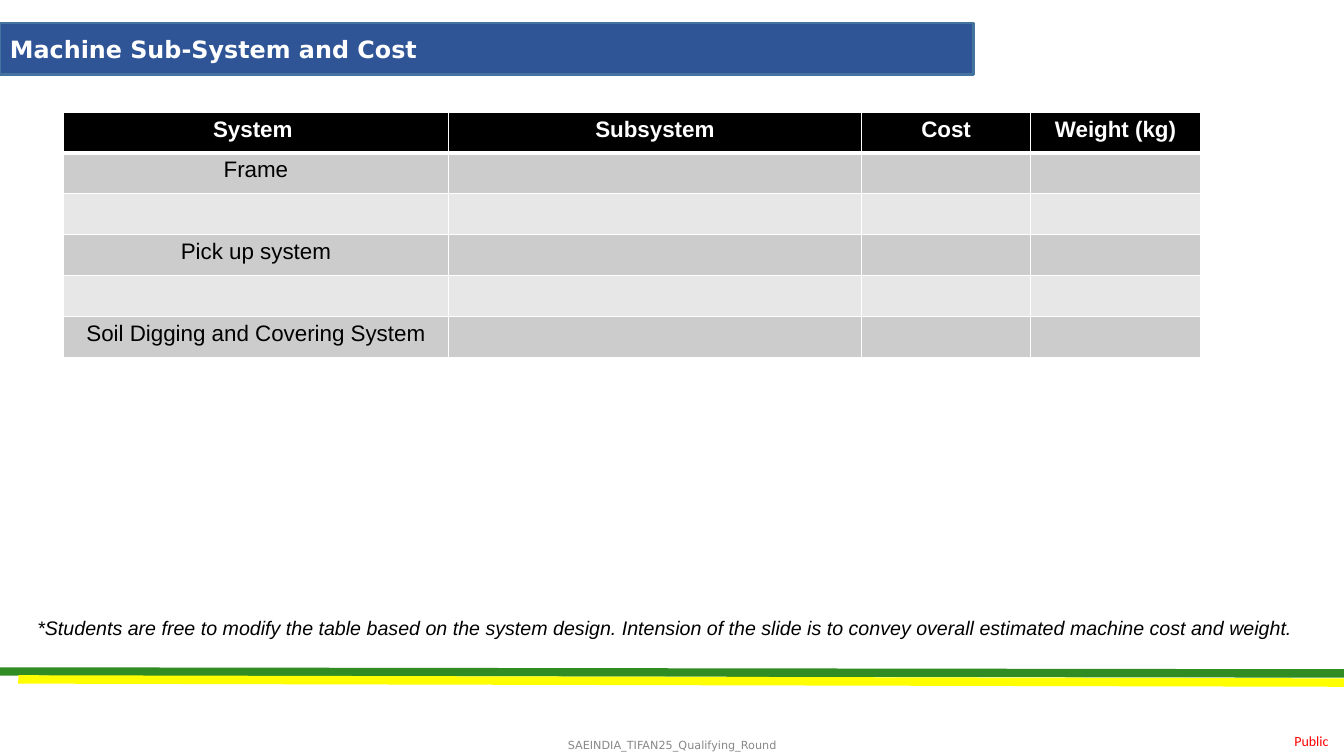
"""Build the machine sub-system and cost slide."""
from dataclasses import dataclass

import pptx
import pptx.dml.color
import pptx.enum.shapes
import pptx.enum.text
import pptx.oxml
import pptx.oxml.ns
import pptx.util
from lxml import etree
from pptx.util import Cm, Pt

RGB = pptx.dml.color.RGBColor.from_string
ALIGN = pptx.enum.text.PP_ALIGN
MIDDLE = pptx.enum.text.MSO_ANCHOR.MIDDLE
qn = pptx.oxml.ns.qn


@dataclass(frozen=True)
class Theme:
    white: str = "FFFFFF"
    black: str = "000000"
    red: str = "FF0000"
    grey: str = "888888"
    green: str = "318C23"
    yellow: str = "FFFF00"
    banner: str = "2F5597"
    banner_line: str = "43739E"
    bands: tuple = ("E7E7E7", "CCCCCC")
    body: str = "Arial"
    heading: str = "DejaVu Sans"
    label: str = "Calibri"
    title_size: int = 17
    table_size: int = 16
    note_size: int = 14
    label_size: int = 10
    footer_size: int = 8


theme = Theme()


def add_text(tf, text, font, size, color, align=ALIGN.LEFT, bold=False, italic=False):
    p = tf.paragraphs[0]
    p.alignment = align
    r = p.add_run()
    r.text = text
    r.font.name = font
    r.font.size = Pt(size)
    r.font.color.rgb = RGB(color)
    r.font.bold = bold
    r.font.italic = italic


def add_border(cell, side, width):
    tcPr = cell._tc.get_or_add_tcPr()
    ln = etree.SubElement(tcPr, qn(f"a:ln{side}"), w=str(Pt(width)))
    fill = etree.SubElement(ln, qn("a:solidFill"))
    etree.SubElement(fill, qn("a:srgbClr"), val=theme.white)


prs = pptx.Presentation()
prs.slide_width, prs.slide_height = Cm(33.87), Cm(19.05)
s = prs.slides.add_slide(prs.slide_layouts[6])

stripes = [
    (0, 16.92, 16.97, theme.green),
    (0.46, 17.12, 17.2, theme.yellow),
]
for left, start, end, color in stripes:
    line = s.shapes.add_connector(
        pptx.enum.shapes.MSO_CONNECTOR.STRAIGHT,
        Cm(left), Cm(start), Cm(33.87), Cm(end),
    )
    line.line.color.rgb = RGB(color)
    line.line.width = Pt(6)
    etree.SubElement(line._element.spPr, qn("a:effectLst"))

sp = s.shapes.add_shape(
    pptx.enum.shapes.MSO_SHAPE.RECTANGLE, Cm(0), Cm(0.58), Cm(24.54), Cm(1.3)
)
sp.shadow.inherit = False
sp.fill.solid()
sp.fill.fore_color.rgb = RGB(theme.banner)
sp.line.color.rgb = RGB(theme.banner_line)
sp.line.width = Pt(2)
sp.text_frame.vertical_anchor = MIDDLE
add_text(sp.text_frame, "Machine Sub-System and Cost", theme.heading,
         theme.title_size, theme.white, bold=True)

rows = [
    ("System ", "Subsystem", "Cost", "Weight (kg)"),
    ("Frame", "", "", ""),
    ("", "", "", ""),
    ("Pick up system", "", "", ""),
    ("", "", "", ""),
    ("Soil Digging and Covering System", "", "", ""),
]
widths = (9.7, 10.41, 4.27, 4.27)
row_height = 1.03
table = s.shapes.add_table(
    len(rows), len(widths), Cm(1.6), Cm(2.82),
    Cm(sum(widths)), Cm(row_height * len(rows)),
).table
for column, width in zip(table.columns, widths):
    column.width = Cm(width)
for i, values in enumerate(rows):
    header = i == 0
    table.rows[i].height = Cm(row_height)
    for j, value in enumerate(values):
        cell = table.cell(i, j)
        for side in "LRTB":
            thick = (header and side == "B") or (i == 1 and side == "T")
            add_border(cell, side, 3 if thick else 1)
        cell.fill.solid()
        cell.fill.fore_color.rgb = RGB(theme.black if header else theme.bands[i % 2])
        if value:
            add_text(cell.text_frame, value, theme.body, theme.table_size,
                     theme.white if header else theme.black, ALIGN.CENTER, bold=header)

note = s.shapes.add_textbox(Cm(0.69), Cm(15.39), Cm(32.18), Cm(0.86))
note.text_frame.word_wrap = True
add_text(note.text_frame,
         "*Students are free to modify the table based on the system design. "
         "Intension of the slide is to convey overall estimated machine cost and weight.",
         theme.body, theme.note_size, theme.black, italic=True)

footer = s.shapes.add_textbox(Cm(11.23), Cm(18.52), Cm(11.43), Cm(0.53))
footer.text_frame.word_wrap = True
footer.text_frame.vertical_anchor = MIDDLE
add_text(footer.text_frame, "SAEINDIA_TIFAN25_Qualifying_Round", theme.heading,
         theme.footer_size, theme.grey, ALIGN.CENTER)

label = s.shapes.add_textbox(Cm(32.26), Cm(18.31), Cm(1.22), Cm(0.74))
tf = label.text_frame
tf.word_wrap = True
tf.vertical_anchor = MIDDLE
tf.margin_left = tf.margin_right = tf.margin_top = tf.margin_bottom = 0
add_text(tf, "Public", theme.label, theme.label_size, theme.red, ALIGN.RIGHT)

prs.save("out.pptx")
